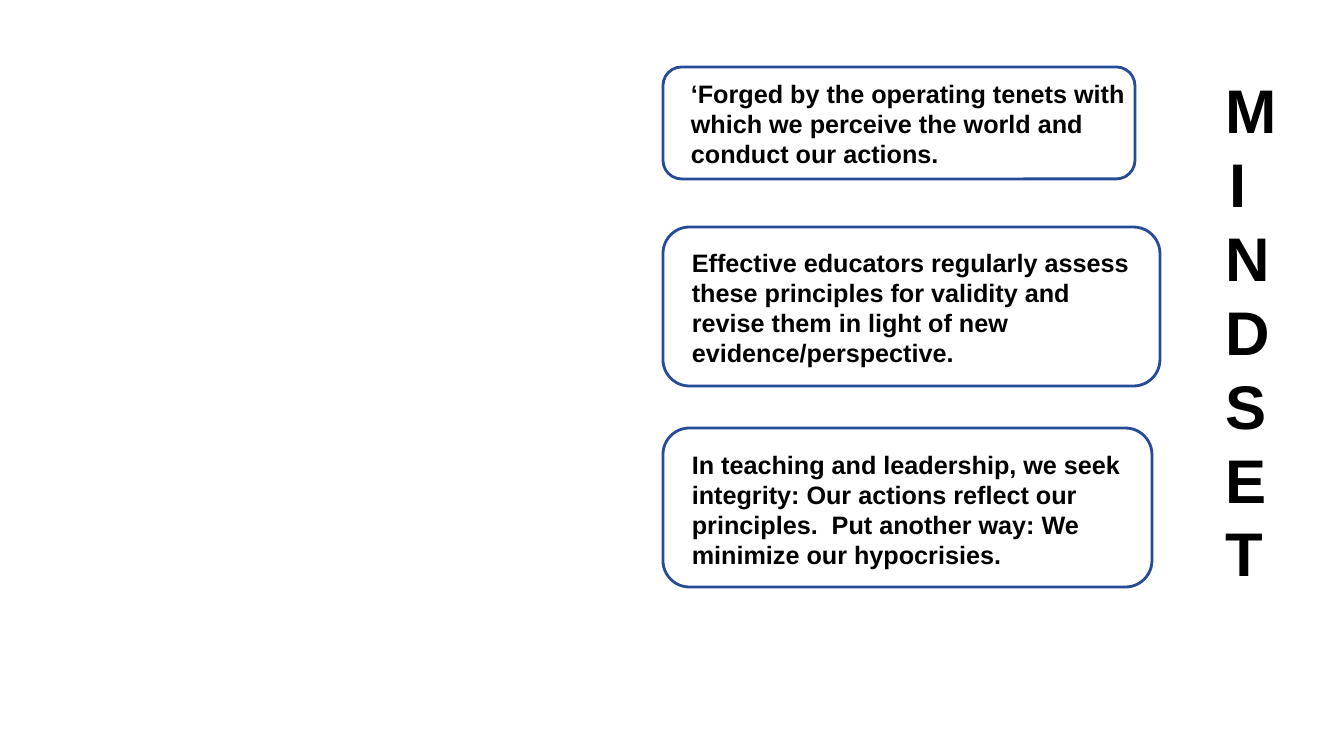
from pptx import Presentation
from pptx.dml.color import RGBColor
from pptx.enum.shapes import MSO_SHAPE
from pptx.enum.text import MSO_ANCHOR, MSO_AUTO_SIZE, PP_ALIGN
from pptx.util import Emu, Pt

BLACK = RGBColor(0x00, 0x00, 0x00)
WHITE = RGBColor(0xFF, 0xFF, 0xFF)
BLUE = RGBColor(0x26, 0x4B, 0x97)

PX = 914400 / 100.8
PAGE_SIZE = (1344, 756)
TITLE = "MINDSET"
TITLE_BOX = (1215, 67, 47, 532)
FRAME_LEFT = 663

# Frame top, width, height; text box left, top, width, height; wording
PRINCIPLES = [
    ((67, 472, 112), (681, 73, 454, 102),
     "‘Forged by the operating tenets with which we perceive the world "
     "and conduct our actions."),
    ((227, 497, 159), (682, 242, 471, 132),
     "Effective educators regularly assess these principles for validity "
     "and revise them in light of new evidence/perspective."),
    ((428, 489, 159), (682, 444, 479, 132),
     "In teaching and leadership, we seek integrity: Our actions reflect our "
     "principles.  Put another way: We minimize our hypocrisies."),
]

FRAME_FORMAT = {"word_wrap": True, "vertical_anchor": MSO_ANCHOR.TOP,
                "auto_size": MSO_AUTO_SIZE.SHAPE_TO_FIT_TEXT}
FONT_FORMAT = {"name": "Arial", "bold": True}


def px(*lengths):
    return [Emu(round(length * PX)) for length in lengths]


def write(shape, lines, size, align):
    frame = shape.text_frame
    for name, value in FRAME_FORMAT.items():
        setattr(frame, name, value)
    frame.text = "\n".join(lines)
    for para in frame.paragraphs:
        para.alignment = align
        for span in para.runs:
            for name, value in FONT_FORMAT.items():
                setattr(span.font, name, value)
            span.font.size = Pt(size)
            span.font.color.rgb = BLACK


def add_frame(page, top, width, height):
    frame = page.shapes.add_shape(MSO_SHAPE.ROUNDED_RECTANGLE,
                                  *px(FRAME_LEFT, top, width, height))
    frame.shadow.inherit = False
    frame.fill.background()
    frame.line.color.rgb = BLUE
    frame.line.width = Pt(2)


def main():
    deck = Presentation()
    deck.slide_width, deck.slide_height = px(*PAGE_SIZE)
    page = deck.slides.add_slide(deck.slide_layouts.get_by_name("Title Only"))
    page.background.fill.solid()
    page.background.fill.fore_color.rgb = WHITE

    for frame_place, text_place, wording in PRINCIPLES:
        add_frame(page, *frame_place)
        write(page.shapes.add_textbox(*px(*text_place)), [wording], 18, PP_ALIGN.LEFT)

    title = page.shapes.title
    title.left, title.top, title.width, title.height = px(*TITLE_BOX)
    write(title, TITLE, 44, PP_ALIGN.CENTER)

    deck.save("out.pptx")


if __name__ == "__main__":
    main()
